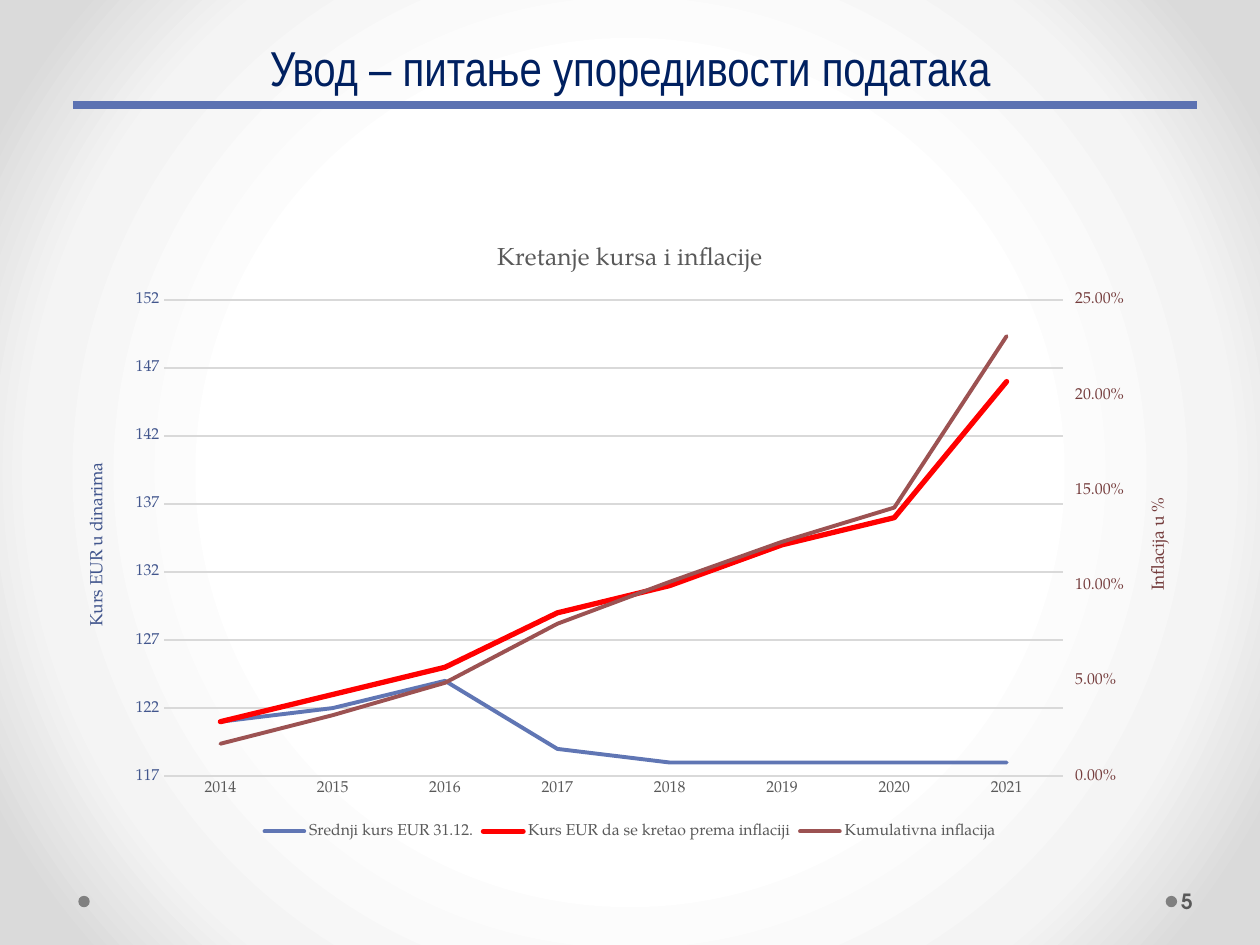
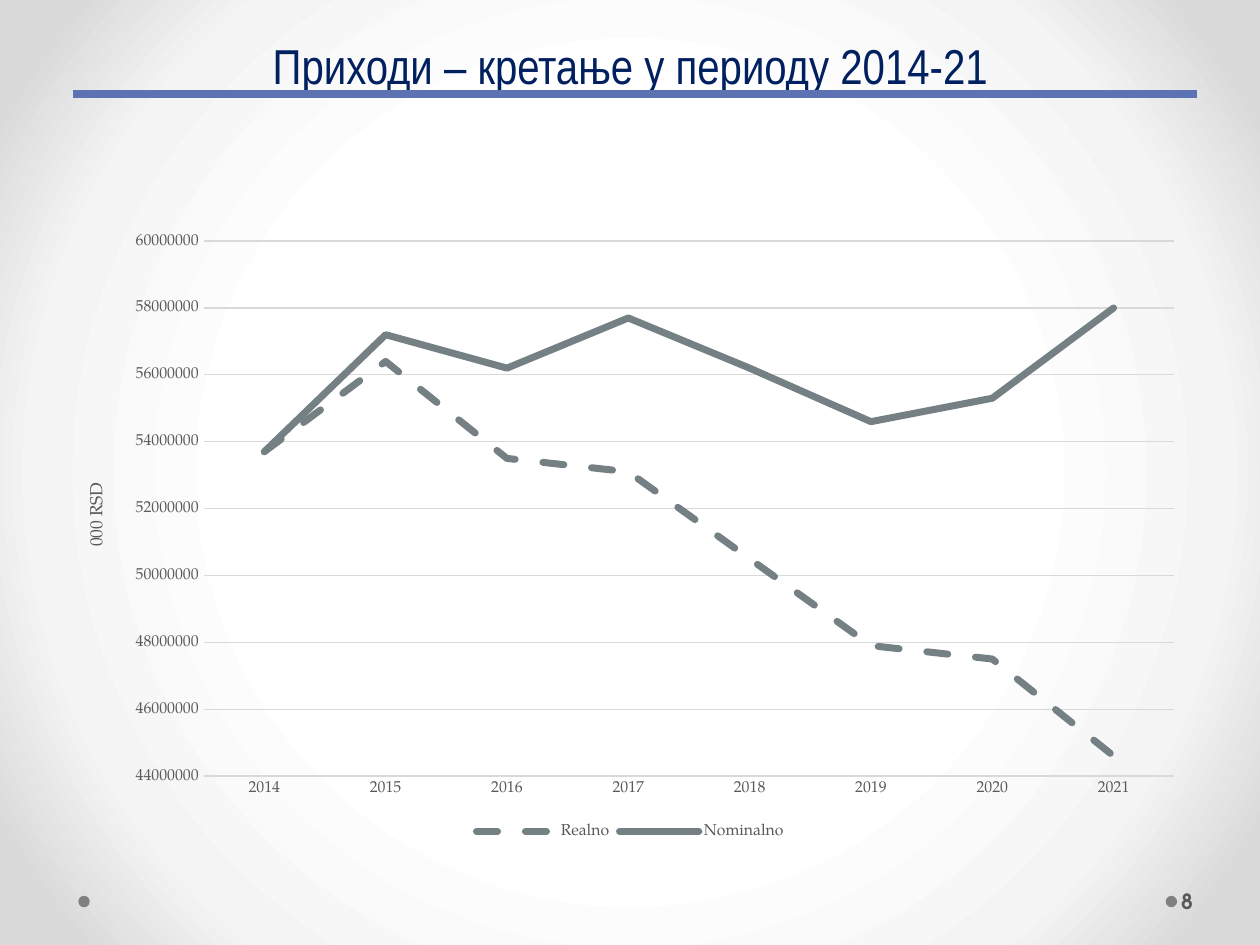
from copy import deepcopy

from lxml import etree
from pptx import Presentation
from pptx.chart import axis as ax
from pptx.chart import data as chart_data
from pptx.dml.color import RGBColor
from pptx.enum import chart as ch, dml, shapes, text
from pptx.oxml import ns
from pptx.util import Cm, Pt

# Shared look
NAVY, RULE_BLUE, DOT_GREY, TEXT_GREY = "002060", "5C72B2", "808080", "595959"
GRID_GREY, BLUE, RED, BROWN, SLATE = "D9D9D9", "6076B4", "FF0000", "9C5252", "758085"
DARK_BLUE, DARK_BROWN = "42568D", "753D3D"
TITLE_FONT, NUMBER_FONT, CHART_FONT = "Arial Narrow", "TeX Gyre Adventor", "TeX Gyre Pagella"
BACKGROUND_STOPS = [(50, "FFFFFF"), (76, "F4F4F4"), (92, "DADADA")]
YEARS = [str(year) for year in range(2014, 2022)]
CHART_BOX = (1.27, 4.45, 22.86, 12.57)


def rgb(hex_color):
    return RGBColor.from_string(hex_color)


def apply(target, values):
    for name, value in values.items():
        setattr(target, name, value)


def style_font(font, name, size, color, bold=False):
    apply(font, {"name": name, "size": Pt(size), "bold": bold})
    font.color.rgb = rgb(color)


def style_line(line, color, width):
    line.color.rgb = rgb(color)
    line.width = Pt(width)


def paint_background(master):
    fill = master.background.fill
    fill.gradient()
    gradient = master.element.find(".//" + ns.qn("a:gradFill"))
    for child in list(gradient):
        gradient.remove(child)
    stops = etree.SubElement(gradient, ns.qn("a:gsLst"))
    for position, color in BACKGROUND_STOPS:
        stop = etree.SubElement(stops, ns.qn("a:gs"), pos=str(position * 1000))
        etree.SubElement(stop, ns.qn("a:srgbClr"), val=color)
    circle = etree.SubElement(gradient, ns.qn("a:path"), path="circle")
    etree.SubElement(circle, ns.qn("a:fillToRect"), dict.fromkeys("ltrb", "50000"))


# Slide parts
def add_title(slide, wording, box):
    title = slide.shapes.title
    apply(title, dict(zip(("left", "top", "width", "height"), map(Cm, box))))
    frame = title.text_frame
    frame.text = wording
    apply(frame, {"vertical_anchor": text.MSO_ANCHOR.BOTTOM, "word_wrap": True,
                  "auto_size": text.MSO_AUTO_SIZE.NONE})
    paragraph = frame.paragraphs[0]
    apply(paragraph, {"alignment": text.PP_ALIGN.CENTER, "line_spacing": Pt(58)})
    style_font(paragraph.runs[0].font, TITLE_FONT, 28, NAVY)


def add_rule(slide, left, right, top):
    rule = slide.shapes.add_connector(shapes.MSO_CONNECTOR.STRAIGHT,
                                      Cm(left), Cm(top), Cm(right), Cm(top))
    style_line(rule.line, RULE_BLUE, 4.5)
    etree.SubElement(rule.element.spPr, ns.qn("a:effectLst"))


def add_footer(slide, number, left, top):
    for dot_left in (left, left + 21.92):
        dot = slide.shapes.add_shape(shapes.MSO_SHAPE.OVAL, Cm(dot_left), Cm(top + 0.41),
                                     Cm(0.23), Cm(0.23))
        dot.shadow.inherit = False
        dot.fill.solid()
        dot.fill.fore_color.rgb = rgb(DOT_GREY)
        dot.line.fill.background()
    frame = slide.shapes.add_textbox(Cm(left + 22.15), Cm(top), Cm(1.55), Cm(1.02)).text_frame
    apply(frame, {"word_wrap": True, "vertical_anchor": text.MSO_ANCHOR.MIDDLE,
                  "margin_left": Cm(0.08), "margin_right": Cm(0.13)})
    run = frame.paragraphs[0].add_run()
    run.text = str(number)
    style_font(run.font, NUMBER_FONT, 12, TEXT_GREY, bold=True)


# Chart parts
def style_title(title, wording, size, color):
    title.text_frame.text = wording
    style_font(title.text_frame.paragraphs[0].runs[0].font, CHART_FONT, size, color)


def style_value_axis(axis, wording, color, low, high, step, number_format="General",
                     tick=ch.XL_TICK_MARK.NONE):
    apply(axis, {"minimum_scale": low, "maximum_scale": high, "major_unit": step,
                 "major_tick_mark": tick, "minor_tick_mark": ch.XL_TICK_MARK.NONE,
                 "has_title": True})
    apply(axis.tick_labels, {"number_format": number_format, "number_format_is_linked": False})
    style_font(axis.tick_labels.font, CHART_FONT, 9, color)
    axis.format.line.fill.background()
    style_title(axis.axis_title, wording, 10, color)
    for body in axis.axis_title.element.iter(ns.qn("a:bodyPr")):
        body.set("rot", "-5400000")
        body.set("vert", "horz")


def add_right_axis(chart, **axis_format):
    """Move the last series to a second plot with its value axis on the right."""
    plot_area = chart.element.find(".//" + ns.qn("c:plotArea"))
    left_plot = plot_area.find(ns.qn("c:lineChart"))
    left_axes = [chart.category_axis._element, chart.value_axis._element]
    right_plot = deepcopy(left_plot)
    right_axes = [deepcopy(axis) for axis in left_axes]
    left_plot.remove(left_plot.findall(ns.qn("c:ser"))[-1])
    for series in right_plot.findall(ns.qn("c:ser"))[:-1]:
        right_plot.remove(series)
    left_plot.addnext(right_plot)
    for axis in right_axes:
        left_axes[-1].addnext(axis)

    ids = ["5001", "5002"]
    for reference, axis_id in zip(right_plot.findall(ns.qn("c:axId")), ids):
        reference.set("val", axis_id)
    for axis, own, other in zip(right_axes, ids, reversed(ids)):
        axis.find(ns.qn("c:axId")).set("val", own)
        axis.find(ns.qn("c:crossAx")).set("val", other)
    right_axes[1].find(ns.qn("c:axPos")).set("val", "r")
    right_axes[1].find(ns.qn("c:crosses")).set("val", "max")

    ax.CategoryAxis(right_axes[0]).visible = False
    right_axis = ax.ValueAxis(right_axes[1])
    apply(right_axis, {"has_major_gridlines": False,
                       "tick_label_position": ch.XL_TICK_LABEL_POSITION.HIGH})
    style_value_axis(right_axis, **axis_format)


def add_line_chart(slide, box, series, left_axis, right_axis=None, heading=None):
    data = chart_data.CategoryChartData()
    data.categories = YEARS
    for name, values, *_ in series:
        data.add_series(name, values)
    chart = slide.shapes.add_chart(ch.XL_CHART_TYPE.LINE, *map(Cm, box), data).chart
    style_font(chart.font, CHART_FONT, 10, "000000")

    chart.has_title = heading is not None
    if heading:
        style_title(chart.chart_title, heading, 14, TEXT_GREY)
    chart.has_legend = True
    apply(chart.legend, {"position": ch.XL_LEGEND_POSITION.BOTTOM, "include_in_layout": False})
    style_font(chart.legend.font, CHART_FONT, 9, TEXT_GREY)

    for line, (_, _, color, width, dash) in zip(chart.plots[0].series, series):
        line.smooth = False
        style_line(line.format.line, color, width)
        if dash:
            line.format.line.dash_style = dash
    for stroke in chart.element.xpath(".//c:ser/c:spPr/a:ln"):
        stroke.set("cap", "rnd")

    years = chart.category_axis
    apply(years, {"major_tick_mark": ch.XL_TICK_MARK.NONE,
                  "minor_tick_mark": ch.XL_TICK_MARK.NONE,
                  "tick_label_position": ch.XL_TICK_LABEL_POSITION.NEXT_TO_AXIS})
    style_font(years.tick_labels.font, CHART_FONT, 9, TEXT_GREY)
    style_line(years.format.line, GRID_GREY, 0.75)
    chart.value_axis.has_major_gridlines = True
    style_line(chart.value_axis.major_gridlines.format.line, GRID_GREY, 0.75)
    style_value_axis(chart.value_axis, **left_axis)
    if right_axis:
        add_right_axis(chart, **right_axis)


def add_chart_slide(prs, title, title_box, rule_top, number, **chart):
    slide = prs.slides.add_slide(prs.slide_layouts.get_by_name("Title Only"))
    add_footer(slide, number, 1.58, 17.65)
    add_title(slide, title, title_box)
    add_line_chart(slide, CHART_BOX, **chart)
    add_rule(slide, 1.47, 24.13, rule_top)


def main():
    prs = Presentation()
    apply(prs, {"slide_width": Cm(25.4), "slide_height": Cm(19.05)})
    paint_background(prs.slide_master)

    # Exchange rate and inflation
    add_chart_slide(
        prs, "Увод – питање упоредивости података", (1.27, 0.38, 22.86, 1.68), 2.11, 5,
        heading="Kretanje kursa i inflacije",
        series=[
            ("Srednji kurs EUR 31.12.",
             [121, 122, 124, 119, 118, 118, 118, 118], BLUE, 2.25, None),
            ("Kurs EUR da se kretao prema inflaciji",
             [121, 123, 125, 129, 131, 134, 136, 146], RED, 3, None),
            ("Kumulativna inflacija",
             [0.017, 0.032, 0.049, 0.08, 0.102, 0.123, 0.141, 0.231], BROWN, 2.25, None),
        ],
        left_axis=dict(wording="Kurs EUR u dinarima", color=DARK_BLUE, low=117, high=152, step=5),
        right_axis=dict(wording="Inflacija u %", color=DARK_BROWN, low=0, high=0.25, step=0.05,
                        number_format="0.00%", tick=ch.XL_TICK_MARK.OUTSIDE))

    # Real and nominal revenue
    million = 1_000_000
    revenue = {
        "Realno": ([53.7, 56.4, 53.5, 53.1, 50.5, 47.9, 47.5, 44.6], dml.MSO_LINE.DASH),
        "Nominalno": ([53.7, 57.2, 56.2, 57.7, 56.2, 54.6, 55.3, 58], None),
    }
    add_chart_slide(
        prs, "Приходи – кретање у периоду 2014-21", (1.27, 0, 22.86, 2.03), 1.9, 8,
        series=[(name, [round(value * million) for value in values], SLATE, 4, dash)
                for name, (values, dash) in revenue.items()],
        left_axis=dict(wording="000 RSD", color=TEXT_GREY, low=44 * million, high=60 * million,
                       step=2 * million))

    prs.save("out.pptx")


if __name__ == "__main__":
    main()
